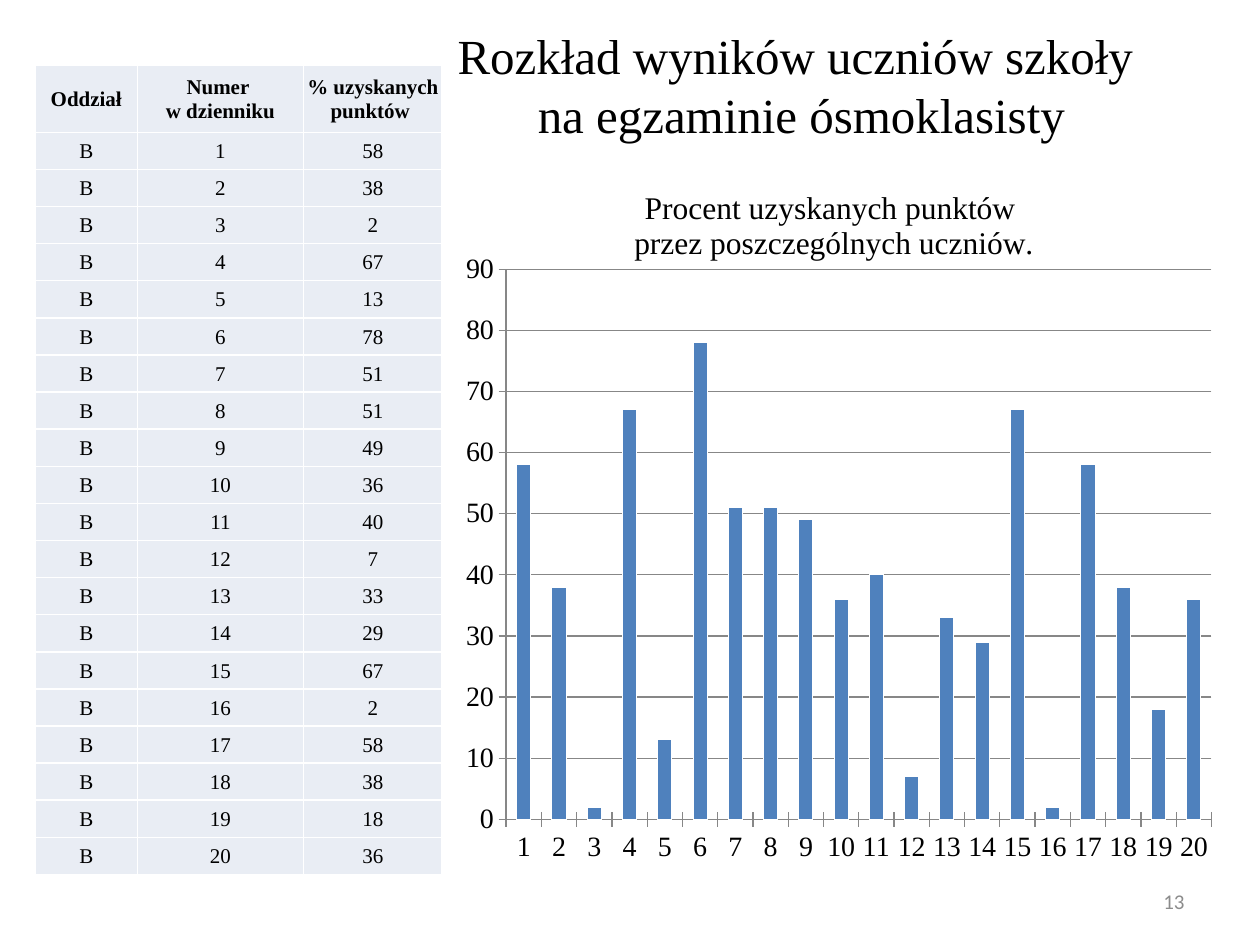
"""Builds the slide with exam results per pupil: title, table and column chart."""
from lxml import etree
from pptx import Presentation
from pptx.chart.data import CategoryChartData
from pptx.dml.color import RGBColor
from pptx.enum.chart import XL_CHART_TYPE, XL_TICK_MARK
from pptx.enum.text import MSO_ANCHOR, PP_ALIGN
from pptx.oxml import parse_xml
from pptx.oxml.ns import nsdecls
from pptx.util import Inches, Pt

CENTER, RIGHT = PP_ALIGN.CENTER, PP_ALIGN.RIGHT
MIDDLE = MSO_ANCHOR.MIDDLE
COLUMN = XL_CHART_TYPE.COLUMN_CLUSTERED
CROSS = XL_TICK_MARK.CROSS
SERIF = "Times New Roman"
SCORES = [58, 38, 2, 67, 13, 78, 51, 51, 49, 36,
          40, 7, 33, 29, 67, 2, 58, 38, 18, 36]
PUPILS = [str(n) for n in range(1, len(SCORES) + 1)]


def color(code):
    return RGBColor.from_string(code)


def write(frame, text, size, name=SERIF, tint="000000", bold=False, align=CENTER):
    frame.text = text
    for par in frame.paragraphs:
        par.alignment = align
        font = par.font
        font.size, font.name, font.bold = Pt(size), name, bold
        font.color.rgb = color(tint)


deck = Presentation()
deck.slide_width, deck.slide_height = Inches(10), Inches(7.5)
slide = deck.slides.add_slide(deck.slide_layouts[6])
shapes = slide.shapes

title = shapes.add_textbox(Inches(2.72), Inches(0), Inches(7.28), Inches(1.38)).text_frame
title.word_wrap = True
title.margin_left = title.margin_right = Inches(0.59)
title.margin_top = title.margin_bottom = Inches(0.2)
write(title, "Rozkład wyników uczniów szkoły \nna egzaminie ósmoklasisty", 28)

rows = [("Oddział", "Numer \nw dzienniku", "% uzyskanych punktów ")]
rows += [("B", pupil, str(score)) for pupil, score in zip(PUPILS, SCORES)]
table = shapes.add_table(len(rows), 3, Inches(0.28), Inches(0.52),
                         Inches(3.23), Inches(6.42)).table
for col, width in zip(table.columns, (0.81, 1.32, 1.1)):
    col.width = Inches(width)
for r, texts in enumerate(rows):
    table.rows[r].height = Inches((6.42 - 0.53) / len(PUPILS) if r else 0.53)
    for c, text in enumerate(texts):
        cell = table.cell(r, c)
        cell.margin_left = cell.margin_right = cell.margin_top = Inches(0.01)
        cell.margin_bottom = 0
        cell.vertical_anchor = MIDDLE
        write(cell.text_frame, text, 12, bold=r == 0)
        props = cell._tc.get_or_add_tcPr()
        for side in ("lnL", "lnR", "lnT", "lnB"):
            props.append(parse_xml(
                f'<a:{side} {nsdecls("a")} w="12700"><a:solidFill>'
                f'<a:srgbClr val="FFFFFF"/></a:solidFill></a:{side}>'))
        cell.fill.solid()
        cell.fill.fore_color.rgb = color("E9EDF4")

data = CategoryChartData()
data.categories = PUPILS
data.add_series("Series 1", SCORES)
chart = shapes.add_chart(COLUMN, Inches(3.35), Inches(1.31),
                         Inches(6.54), Inches(5.67), data).chart
chart.font.size, chart.font.name = Pt(18), "Calibri"
chart.font.color.rgb = color("000000")
chart.has_legend = False
write(chart.chart_title.text_frame,
      "Procent uzyskanych punktów \nprzez poszczególnych uczniów.", 18)
for axis in (chart.category_axis, chart.value_axis):
    axis.major_tick_mark = CROSS
    axis.tick_labels.font.size = Pt(16)
    axis.tick_labels.font.name = SERIF
    axis.format.line.color.rgb = color("878787")
grid = chart.value_axis.major_gridlines.format.line
grid.color.rgb = color("878787")
chart.value_axis.minimum_scale, chart.value_axis.maximum_scale = 0, 90
chart.value_axis.major_unit = 10

plot = chart.plots[0]
plot.vary_by_categories = False
plot.gap_width = 150
bars = plot.series[0].format
bars.fill.solid()
bars.fill.fore_color.rgb = color("4F81BD")
bars.line.color.rgb = color("FFFFFF")

area = chart._chartSpace.chart.plotArea
for old in area.xpath("c:layout"):
    area.remove(old)
layout = parse_xml(f'<c:layout {nsdecls("c")}><c:manualLayout/></c:layout>')
space = etree.QName(layout).namespace
for tag, value in (("layoutTarget", "inner"), ("xMode", "edge"), ("yMode", "edge"),
                   ("x", "0.102"), ("y", "0.146"), ("w", "0.856"), ("h", "0.77")):
    etree.SubElement(layout[0], f"{{{space}}}{tag}").set("val", value)
area.insert(0, layout)

page = shapes.add_textbox(Inches(7.17), Inches(6.95), Inches(2.33), Inches(0.4)).text_frame
page.word_wrap = True
page.vertical_anchor = MIDDLE
write(page, "13", 12, "Calibri", "8C8C8C", align=RIGHT)

deck.save("out.pptx")
